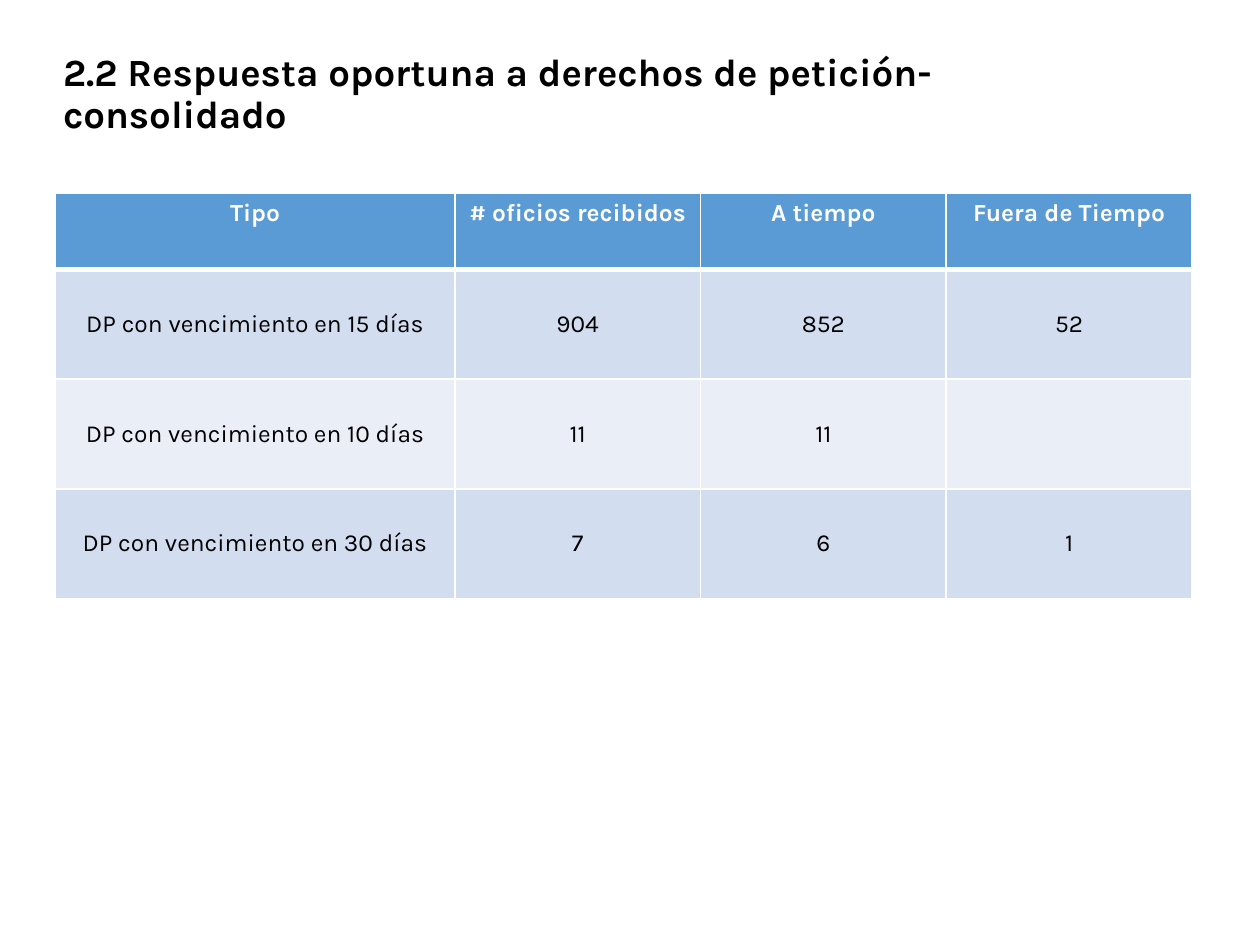
from dataclasses import dataclass

from lxml import etree
from pptx import Presentation
from pptx.dml.color import RGBColor
from pptx.enum.text import MSO_ANCHOR, MSO_AUTO_SIZE, PP_ALIGN
from pptx.oxml.ns import qn
from pptx.util import Inches, Pt

LEFT, CENTER = PP_ALIGN.LEFT, PP_ALIGN.CENTER
TOP, MIDDLE = MSO_ANCHOR.TOP, MSO_ANCHOR.MIDDLE
NO_FIT = MSO_AUTO_SIZE.NONE

BLACK = RGBColor(0x00, 0x00, 0x00)
WHITE = RGBColor(0xFF, 0xFF, 0xFF)
BLUE = RGBColor(0x5B, 0x9B, 0xD5)
BAND_DARK = RGBColor(0xD2, 0xDE, 0xEF)
BAND_LIGHT = RGBColor(0xEA, 0xEF, 0xF7)

FONT = "Karla"
TITLE_ONLY = 5
COLUMN_WIDTHS = (3.17, 1.95, 1.95, 1.95)
HEADER_HEIGHT, BODY_HEIGHT = 0.61, 0.87
THIN, THICK = 1, 3


@dataclass(frozen=True)
class RowStyle:
    fill: RGBColor
    color: RGBColor
    bold: bool
    anchor: MSO_ANCHOR
    height: float


HEADER = RowStyle(BLUE, WHITE, True, TOP, HEADER_HEIGHT)
ODD = RowStyle(BAND_DARK, BLACK, False, MIDDLE, BODY_HEIGHT)
EVEN = RowStyle(BAND_LIGHT, BLACK, False, MIDDLE, BODY_HEIGHT)

ROWS = (
    (HEADER, ("Tipo", "# oficios recibidos", "A tiempo", "Fuera de Tiempo")),
    (ODD, ("DP con vencimiento en 15 días", "904", "852", "52")),
    (EVEN, ("DP con vencimiento en 10 días", "11", "11", "")),
    (ODD, ("DP con vencimiento en 30 días", "7", "6", "1")),
)


def format_font(font, size: int, color: RGBColor, bold: bool) -> None:
    for name, value in {"name": FONT, "size": Pt(size), "bold": bold}.items():
        setattr(font, name, value)
    font.color.rgb = color


def add_borders(cell, widths: dict[str, int]) -> None:
    """Draw white cell borders; call before filling the cell."""
    properties = cell._tc.get_or_add_tcPr()
    for side, width in widths.items():
        line = etree.SubElement(properties, qn(f"a:ln{side}"), w=str(Pt(width)))
        fill = etree.SubElement(line, qn("a:solidFill"))
        etree.SubElement(fill, qn("a:srgbClr"), val=str(WHITE))


def fill_cell(cell, text: str, style: RowStyle, borders: dict[str, int]) -> None:
    add_borders(cell, borders)
    cell.fill.solid()
    cell.fill.fore_color.rgb = style.fill
    cell.vertical_anchor = style.anchor
    para = cell.text_frame.paragraphs[0]
    para.alignment = CENTER
    if text:
        span = para.add_run()
        span.text = text
        format_font(span.font, 14, style.color, style.bold)


def add_title(page, text: str) -> None:
    box = page.shapes.title
    place = {"left": 0.4, "top": 0.33, "width": 8.62, "height": 0.85}
    for name, value in place.items():
        setattr(box, name, Inches(value))
    frame = box.text_frame
    for name, value in {"word_wrap": True, "auto_size": NO_FIT,
                        "vertical_anchor": MIDDLE}.items():
        setattr(frame, name, value)
    para = frame.paragraphs[0]
    para.alignment, para.line_spacing = LEFT, 0.9
    span = para.add_run()
    span.text = text
    format_font(span.font, 22, BLACK, True)


def add_response_table(page) -> None:
    height = sum(style.height for style, _ in ROWS)
    table = page.shapes.add_table(
        len(ROWS), len(COLUMN_WIDTHS), Inches(0.44), Inches(1.53),
        Inches(sum(COLUMN_WIDTHS)), Inches(height)).table
    for column, width in zip(table.columns, COLUMN_WIDTHS):
        column.width = Inches(width)
    for index, (style, texts) in enumerate(ROWS):
        table.rows[index].height = Inches(style.height)
        # The line between header and body is thicker
        borders = {"L": THIN, "R": THIN,
                   "T": THICK if index == 1 else THIN,
                   "B": THICK if index == 0 else THIN}
        for cell, text in zip(table.rows[index].cells, texts):
            fill_cell(cell, text, style, borders)


def main() -> None:
    deck = Presentation()
    deck.slide_width, deck.slide_height = Inches(10), Inches(7.5)
    page = deck.slides.add_slide(deck.slide_layouts[TITLE_ONLY])
    add_title(page, "2.2 Respuesta oportuna a derechos de petición-consolidado")
    add_response_table(page)
    deck.save("out.pptx")


if __name__ == "__main__":
    main()
